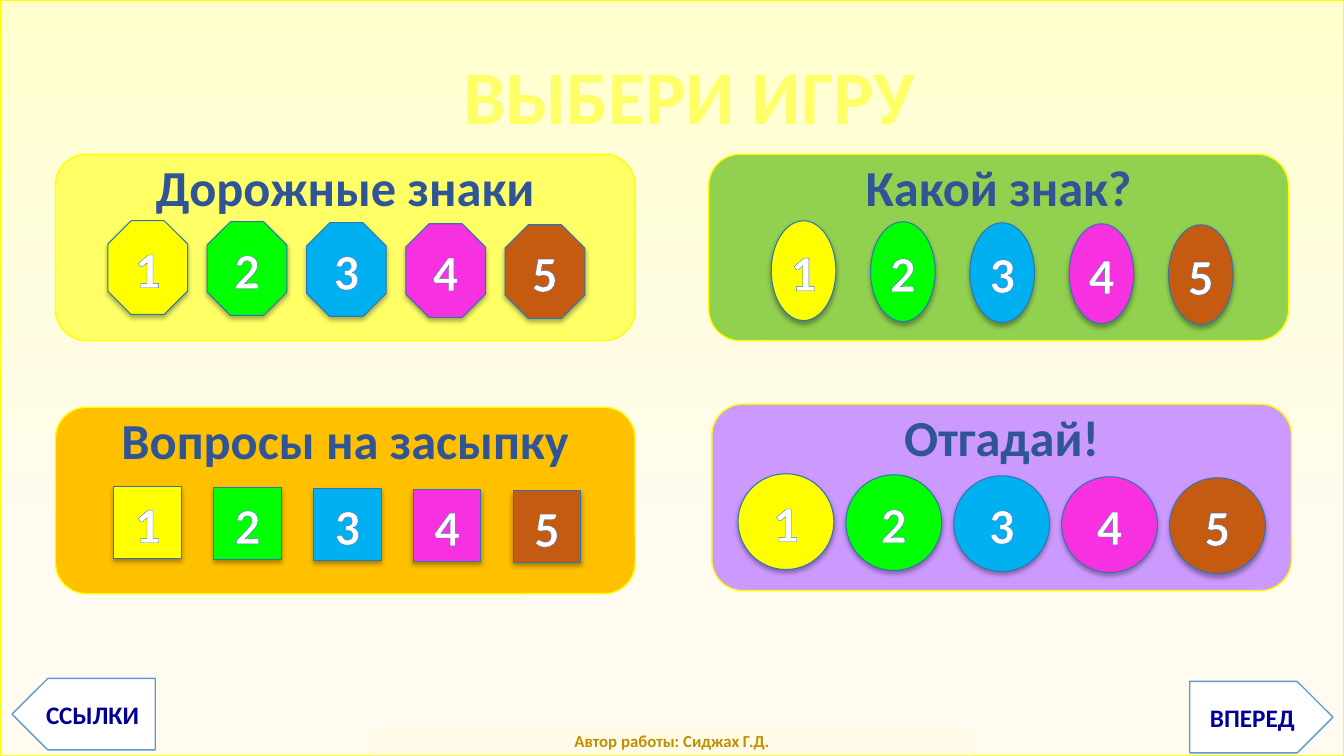
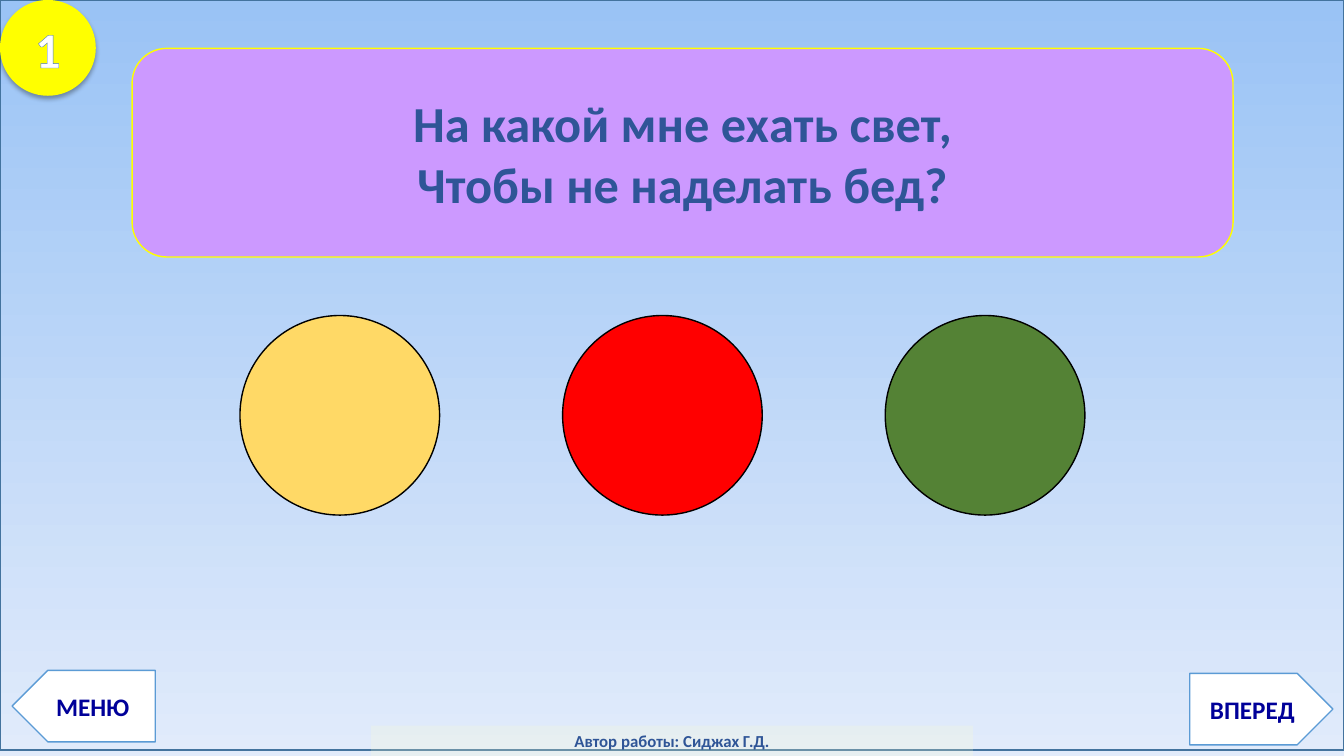
import pptx
import pptx.dml.color
import pptx.enum.shapes
import pptx.enum.text
import pptx.oxml
import pptx.oxml.ns
import pptx.util

KIND = pptx.enum.shapes.MSO_SHAPE
NS = 'xmlns:a="http://schemas.openxmlformats.org/drawingml/2006/main"'
PX = 9144
WIDE, HIGH = 1333, 750
FONT = "Calibri"
NAVY, BLUE, WHITE = "000099", "2F5597", "FFFFFF"
LEMON, LILAC, SUN = "FFFF66", "CC99FF", "FFFF00"
RIM, EDGE = "2E75B6", "5B9BD5"
CHIPS = [SUN, "00FF00", "00B0F0", "F731DF", "C55A11"]
AUTHOR = "Автор работы: Сиджах Г.Д."


def px(*sizes):
    """Turn px lengths into EMU."""
    return [round(size * PX) for size in sizes]


def hue(code):
    """Make a colour from a hex string."""
    return pptx.dml.color.RGBColor.from_string(code)


def shade(shape):
    """Give a shape a soft shadow below it."""
    shape.element.spPr.find(pptx.oxml.ns.qn("a:effectLst")).append(pptx.oxml.parse_xml(
        f'<a:outerShdw {NS} blurRad="44450" dist="27940" dir="5400000" rotWithShape="0">'
        '<a:srgbClr val="000000"><a:alpha val="32000"/></a:srgbClr></a:outerShdw>'))


def form(slide, kind, box, fill=None, line=None, width=1, alpha=None):
    """Add a preset shape with a plain fill and outline."""
    shape = slide.shapes.add_shape(kind, *px(*box))
    shape.shadow.inherit = False
    if fill:
        shape.fill.solid()
        shape.fill.fore_color.rgb = hue(fill)
    else:
        shape.fill.background()
    if alpha:
        tint = shape.element.spPr.find(".//" + pptx.oxml.ns.qn("a:srgbClr"))
        tint.append(pptx.oxml.parse_xml(f'<a:alpha {NS} val="{alpha * 1000}"/>'))
    if line:
        shape.line.color.rgb = hue(line)
        shape.line.width = pptx.util.Pt(width)
    else:
        shape.line.fill.background()
    return shape


def write(shape, text, size=36, color=BLUE, rim=None, wrap=True, pad=(10, 5, 10, 5), shift=0):
    """Set centred bold text, one paragraph for each line."""
    frame = shape.text_frame
    frame.auto_size = pptx.enum.text.MSO_AUTO_SIZE.NONE
    frame.word_wrap = wrap
    frame.vertical_anchor = pptx.enum.text.MSO_ANCHOR.MIDDLE
    (frame.margin_left, frame.margin_top,
     frame.margin_right, frame.margin_bottom) = px(*pad)
    frame.text = text
    for para in frame.paragraphs:
        para.alignment = pptx.enum.text.PP_ALIGN.CENTER
        for run in para.runs:
            run.font.name = FONT
            run.font.size = pptx.util.Pt(size)
            run.font.bold = True
            run.font.color.rgb = hue(color)
            if rim:
                run.font._element.insert(0, pptx.oxml.parse_xml(
                    f'<a:ln {NS} w="10160"><a:solidFill><a:srgbClr val="{rim}"/>'
                    '</a:solidFill></a:ln>'))
    if shift:
        frame.paragraphs[-1]._p.get_or_add_pPr().set("indent", str(shift * PX))


def title(slide, text, box, **style):
    """Place the title in front of what is drawn so far."""
    shape = slide.shapes.title
    shape.left, shape.top, shape.width, shape.height = px(*box)
    write(shape, text, **style)
    slide.shapes.element.append(shape.element)


def chip(slide, kind, box, num, line=RIM):
    """Add a numbered chip, coloured by its number."""
    shape = form(slide, kind, box, CHIPS[num - 1], line, 0.75)
    shade(shape)
    write(shape, str(num), color=WHITE, rim="4472C4", wrap=False, pad=(0, 0, 0, 0))


def panel(slide, box, fill):
    """Add a rounded panel."""
    return form(slide, KIND.ROUNDED_RECTANGLE, box, fill, SUN)


def game(slide, name, spot, fill, kind, first, size, pitch):
    """Add a game panel with its row of five chips."""
    write(panel(slide, (*spot, 575, 185), fill), name, pad=(10, 5, 10, 126))
    left, top = first
    for i in range(len(CHIPS)):
        chip(slide, kind, (left + i * pitch, top + i, *size), i + 1)


def arrow(slide, text, left, top, back=False):
    """Add a navigation arrow, pointing left if back."""
    shape = form(slide, KIND.PENTAGON, (left, top, 142, 71), WHITE, EDGE)
    if back:
        shape.element.spPr.find(pptx.oxml.ns.qn("a:xfrm")).set("flipH", "1")
    write(shape, text, size=18, color=NAVY)


def start(deck, stops, line, high=HIGH):
    """Add a slide with a shaded background and a thin frame."""
    slide = deck.slides.add_slide(deck.slide_layouts[5])
    fill = slide.background.fill
    fill.gradient()
    fill.gradient_angle = 270
    for stop, (place, color) in zip(fill.gradient_stops, stops):
        stop.position = place
        stop.color.rgb = hue(color)
    form(slide, KIND.RECTANGLE, (0, 0, WIDE, high), line=line)
    return slide


def finish(slide, back, top, color):
    """Add the arrows and the author line."""
    arrow(slide, back, 12, top, back=True)
    arrow(slide, "ВПЕРЕД", 1180, top + 3)
    foot = form(slide, KIND.RECTANGLE, (368, 720, 597, 30), "FFFFCC", alpha=21)
    write(foot, AUTHOR, size=12, color=color)


def menu(deck):
    """Build the slide for choosing a game."""
    slide = start(deck, [(0, "FFFFCE"), (0.76, "FFFBF0")], SUN)
    title(slide, "ВЫБЕРИ ИГРУ", (400, 43, 568, 102), size=54, color=LEMON, wrap=False)
    game(slide, "Дорожные знаки", (55, 153), LEMON, KIND.OCTAGON, (107, 219), (79, 93), 98.5)
    game(slide, "Какой знак?", (703, 153), "92D050", KIND.OVAL, (765, 219), (64, 99), 98.5)
    game(slide, "Вопросы на засыпку", (55, 404), "FFC000", KIND.RECTANGLE,
         (113, 483), (67, 71), 99)
    game(slide, "Отгадай!", (706, 401), LILAC, KIND.OVAL, (732, 470), (95, 95), 107)
    finish(slide, "ССЫЛКИ", 673, "BF9000")


def quiz(deck):
    """Build the traffic light question."""
    slide = start(deck, [(0, "9AC3F5"), (1, "E1EBFB")], "43739E", 744)
    box = (131, 48, 1092, 207)
    panel(slide, box, LILAC)
    title(slide, "На какой мне ехать свет,\nЧтобы не наделать бед?", box, shift=-34)
    chip(slide, KIND.OVAL, (0, 0, 95, 95), 1, line=None)
    for i, color in enumerate(["FFD966", "FF0000", "548235"]):
        form(slide, KIND.OVAL, (238 + i * 320, 313, 198, 198), color, "000000")
    finish(slide, "МЕНЮ", 665, BLUE)


def main():
    """Build and save the deck."""
    deck = pptx.Presentation()
    deck.slide_width, deck.slide_height = px(WIDE, HIGH)
    menu(deck)
    quiz(deck)
    deck.save("out.pptx")


if __name__ == "__main__":
    main()
